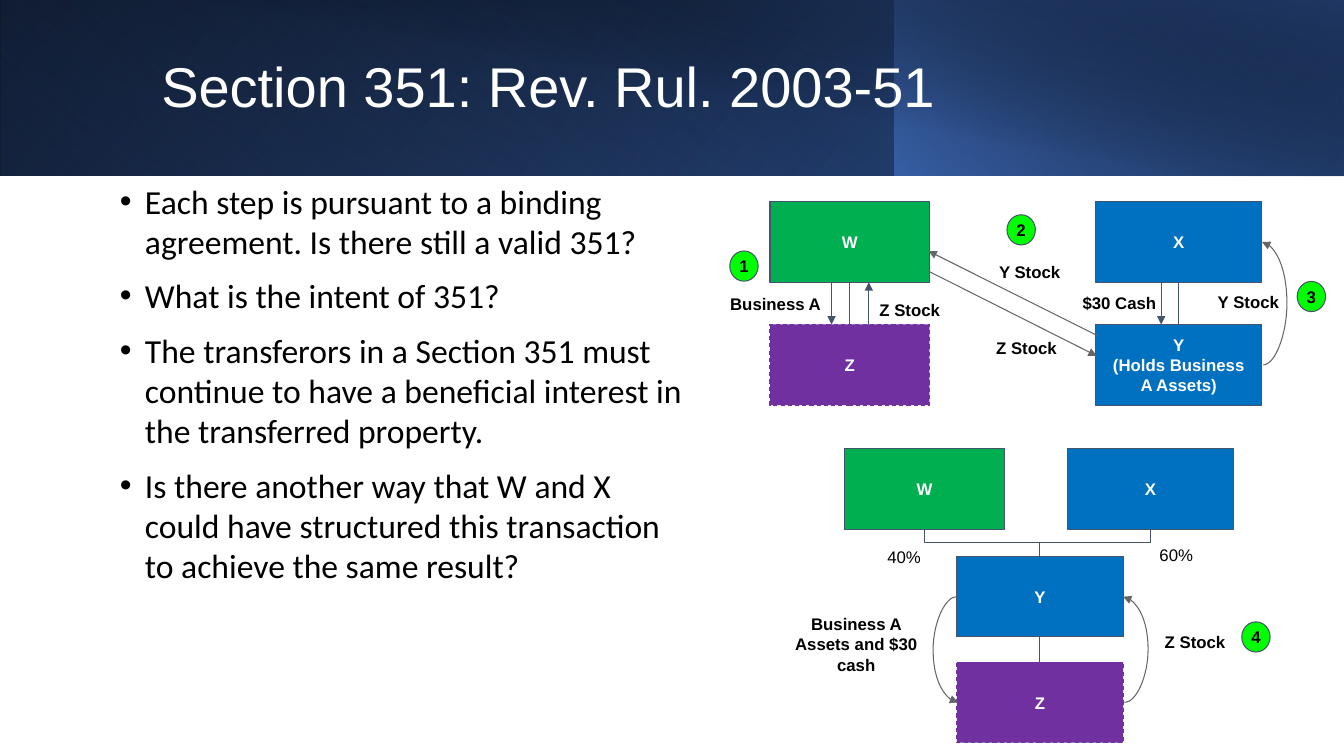
from pptx import Presentation
from pptx.dml.color import RGBColor
from pptx.enum import dml, shapes, text
from pptx.oxml import ns
from pptx.util import Pt
from lxml import etree

COLORS = {
    "white": "FFFFFF", "black": "000000", "green": "00B050", "purple": "7030A0",
    "blue": "0070C0", "lime": "00FF00", "slate": "44546A", "gray": "666666",
    "accent": "4472C4", "mid": "2F5597", "navy": "203864",
}
MARGINS = ("margin_left", "margin_top", "margin_right", "margin_bottom")
BOX_H = 57.6
W_WIDTH, Y_WIDTH = 113.8, 118.8
SHAPE = shapes.MSO_SHAPE
LINK = shapes.MSO_CONNECTOR
BOTTOM, TOP = 2, 0


def rgb(name):
    return RGBColor.from_string(COLORS[name])


def put(obj, **values):
    for name, value in values.items():
        setattr(obj, name, value)


def write(tf, lines, size=12, color="black", font="Arial", bold=False, inset=None,
          anchor=text.MSO_ANCHOR.TOP, **para):
    put(tf, word_wrap=True, vertical_anchor=anchor)
    if inset is not None:
        put(tf, **dict.fromkeys(MARGINS, Pt(inset)))
    for i, line in enumerate(lines):
        p = tf.add_paragraph() if i else tf.paragraphs[0]
        put(p, **para)
        r = p.add_run()
        r.text = line
        put(r.font, size=Pt(size), name=font, bold=bold)
        r.font.color.rgb = rgb(color)


def add_shape(s, kind, x, y, w, h):
    sp = s.shapes.add_shape(kind, Pt(x), Pt(y), Pt(w), Pt(h))
    sp.shadow.inherit = False
    return sp


def node(s, kind, x, y, w, h, fill, lines, color, inset):
    sp = add_shape(s, kind, x, y, w, h)
    sp.fill.solid()
    sp.fill.fore_color.rgb = rgb(fill)
    sp.line.width = Pt(0.75)
    sp.line.color.rgb = rgb("slate")
    write(sp.text_frame, lines, color=color, bold=True, inset=inset,
          anchor=text.MSO_ANCHOR.MIDDLE, alignment=text.PP_ALIGN.CENTER)
    return sp


def entity(s, x, y, w, fill, *lines):
    sp = node(s, SHAPE.RECTANGLE, x, y, w, BOX_H, fill, lines, "white", 7.2)
    if fill == "purple":
        sp.line.color.rgb = rgb("purple")
        sp.line.dash_style = dml.MSO_LINE.DASH
    return sp


def step(s, x, y, number):
    node(s, SHAPE.OVAL, x, y, 20.3, 21.6, "lime", [number], "black", 0)


def label(s, x, y, line, w=104.4, bold=True):
    sp = s.shapes.add_textbox(Pt(x), Pt(y), Pt(w), Pt(21.6))
    write(sp.text_frame, [line], bold=bold, inset=7.2, alignment=text.PP_ALIGN.CENTER)


def link(s, kind, x1, y1, x2, y2, color="slate"):
    c = s.shapes.add_connector(kind, Pt(x1), Pt(y1), Pt(x2), Pt(y2))
    c.line.width = Pt(0.75)
    c.line.color.rgb = rgb(color)
    etree.SubElement(c._element.spPr, ns.qn("a:effectLst"))
    return c


def arrow(s, kind, x, y, tip, tail, color):
    c = link(s, kind, x + tip[0], y + tip[1], x + tail[0], y + tail[1], color)
    etree.SubElement(c.line._get_or_add_ln(), ns.qn("a:headEnd"), type="triangle")
    return c


def curve(s, x, y, tip, tail):
    c = arrow(s, LINK.CURVE, x, y, tip, tail, "gray")
    guides = c._element.spPr.find(ns.qn("a:prstGeom")).get_or_add_avLst()
    etree.SubElement(guides, ns.qn("a:gd"), name="adj1", fmla="val 1800000")


def join(s, upper, lower):
    c = link(s, LINK.STRAIGHT, 0, 0, 0, 0)
    c.begin_connect(upper, BOTTOM)
    c.end_connect(lower, TOP)


def elbow(s, x1, y1, x2, y2):
    cx, cy = (x1 + x2) / 2, (y1 + y2) / 2
    drop, run = (y2 - y1) / 2, abs(x2 - x1) / 2
    c = link(s, LINK.ELBOW, cx - drop, cy - run, cx + drop, cy + run)
    xfrm = c._element.spPr.find(ns.qn("a:xfrm"))
    if x2 > x1:
        xfrm.set("rot", "16200000")
        xfrm.set("flipH", "1")
    else:
        xfrm.set("rot", "5400000")


def banner(s, x, y, w, h):
    split = 639
    layers = [
        (0, w, h, 0, True, 140, [(0, "black", 100), (1, "mid", 100)]),
        (0, split, h, 180, True, 230, [(0.2, "accent", 0), (1, "navy", 55)]),
        (split, w - split, h, 0, True, 220, [(0, "accent", 66), (1, "black", 30)]),
        (36, w - 36, h + 0.5, 0, False, 280, [(0.5, "black", 0), (0.99, "navy", 52)]),
    ]
    for left, width, height, turn, flip, angle, stops in layers:
        sp = add_shape(s, SHAPE.RECTANGLE, x + left, y, width, height)
        sp.rotation = turn
        if flip:
            sp._element.spPr.find(ns.qn("a:xfrm")).set("flipH", "1")
        sp.line.fill.background()
        sp.fill.gradient()
        sp.fill.gradient_angle = 360 - angle
        for stop, (position, color, _) in zip(sp.fill.gradient_stops, stops):
            stop.position = position
            stop.color.rgb = rgb(color)
        for clr, (_, _, opacity) in zip(sp._element.spPr.iter(ns.qn("a:srgbClr")), stops):
            etree.SubElement(clr, ns.qn("a:alpha"), val=str(opacity * 1000))


def title(s, x, y, w, h):
    sp = s.shapes.title
    put(sp, left=Pt(x), top=Pt(y), width=Pt(w), height=Pt(h))
    write(sp.text_frame, ["Section 351: Rev. Rul. 2003-51"], size=40, color="white",
          anchor=text.MSO_ANCHOR.MIDDLE, alignment=text.PP_ALIGN.LEFT, line_spacing=0.9)
    s.shapes._spTree.append(sp._element)


def questions(s, x, y, w, h):
    tf = s.shapes.add_textbox(Pt(x), Pt(y), Pt(w), Pt(h)).text_frame
    write(tf, [
        "Each step is pursuant to a binding agreement. Is there still a valid 351?",
        "What is the intent of 351?",
        "The transferors in a Section 351 must continue to have a beneficial interest "
        "in the transferred property.",
        "Is there another way that W and X could have structured this transaction "
        "to achieve the same result?",
    ], size=24, font="Calibri", space_before=Pt(10))
    for p in tf.paragraphs:
        pPr = p._p.get_or_add_pPr()
        pPr.set("marL", str(Pt(18)))
        pPr.set("indent", str(-Pt(18)))
        etree.SubElement(pPr, ns.qn("a:buFont"), typeface="Arial")
        etree.SubElement(pPr, ns.qn("a:buChar"), char="•")


def exchange(s, x, y):
    right, low = 232.6, 87.8
    w = entity(s, x, y, W_WIDTH, "green", "W")
    z = entity(s, x, y + low, W_WIDTH, "purple", "Z")
    x_corp = entity(s, x + right, y, Y_WIDTH, "blue", "X")
    y_corp = entity(s, x + right, y + low, Y_WIDTH, "blue", "Y", "(Holds Business A Assets)")
    join(s, w, z)
    join(s, x_corp, y_corp)
    for tip, tail, color in [
        ((44, low), (44, BOX_H), "slate"), ((70.6, BOX_H), (70.6, low), "slate"),
        ((279.4, low), (279.4, BOX_H), "slate"),
        ((113.2, 35.3), (234, 95.8), "gray"), ((233.4, 110.2), (113.2, 49.7), "gray"),
    ]:
        arrow(s, LINK.STRAIGHT, x, y, tip, tail, color)
    edge = right + Y_WIDTH
    curve(s, x, y, (edge, BOX_H / 2), (edge + 1, low + BOX_H / 2))
    for dx, dy, line in [
        (-48.2, 58.3, "Business A"), (47.6, 62.6, "Z Stock"), (133.3, 36, "Y Stock"),
        (131, 90, "Z Stock"), (197.4, 57.6, "$30 Cash"), (289.5, 57, "Y Stock"),
    ]:
        label(s, x + dx, y + dy, line)
    for dx, dy, number in [(-28.7, 35.3, "1"), (169.3, 9.4, "2"), (376.6, 57, "3")]:
        step(s, x + dx, y + dy, number)


def result(s, x, y):
    right, mid, y_top, z_top = 159, 80, 77, 152.6
    entity(s, x, y, W_WIDTH, "green", "W")
    entity(s, x + right, y, Y_WIDTH, "blue", "X")
    y_corp = entity(s, x + mid, y + y_top, Y_WIDTH, "blue", "Y")
    z = entity(s, x + mid, y + z_top, Y_WIDTH, "purple", "Z")
    join(s, y_corp, z)
    for owner in (W_WIDTH / 2, right + Y_WIDTH / 2):
        elbow(s, x + owner, y + BOX_H, x + mid + Y_WIDTH / 2, y + y_top)
    y_mid, z_mid, edge = y_top + BOX_H / 2, z_top + BOX_H / 2, mid + Y_WIDTH
    curve(s, x, y, (mid + 1, z_mid), (mid, y_mid))
    curve(s, x, y, (edge, y_mid), (edge + 1, z_mid))
    label(s, x - 44, y + 111, "Business A Assets and $30 cash")
    label(s, x + 198, y + 123.8, "Z Stock")
    step(s, x + 283.6, y + 123.8, "4")
    label(s, x + 1.4, y + 62.6, "40%", 82, False)
    label(s, x + 195.8, y + 61.2, "60%", 82, False)


def main():
    prs = Presentation()
    put(prs, slide_width=Pt(960), slide_height=Pt(540))
    s = prs.slides.add_slide(prs.slide_layouts[5])
    banner(s, 0, 0, 960, 125.4)
    title(s, 108, 23, 779, 81.4)
    questions(s, 78.5, 125.4, 417.6, 402.5)
    exchange(s, 550, 144)
    result(s, 603.4, 320.4)
    prs.save("out.pptx")


if __name__ == "__main__":
    main()
